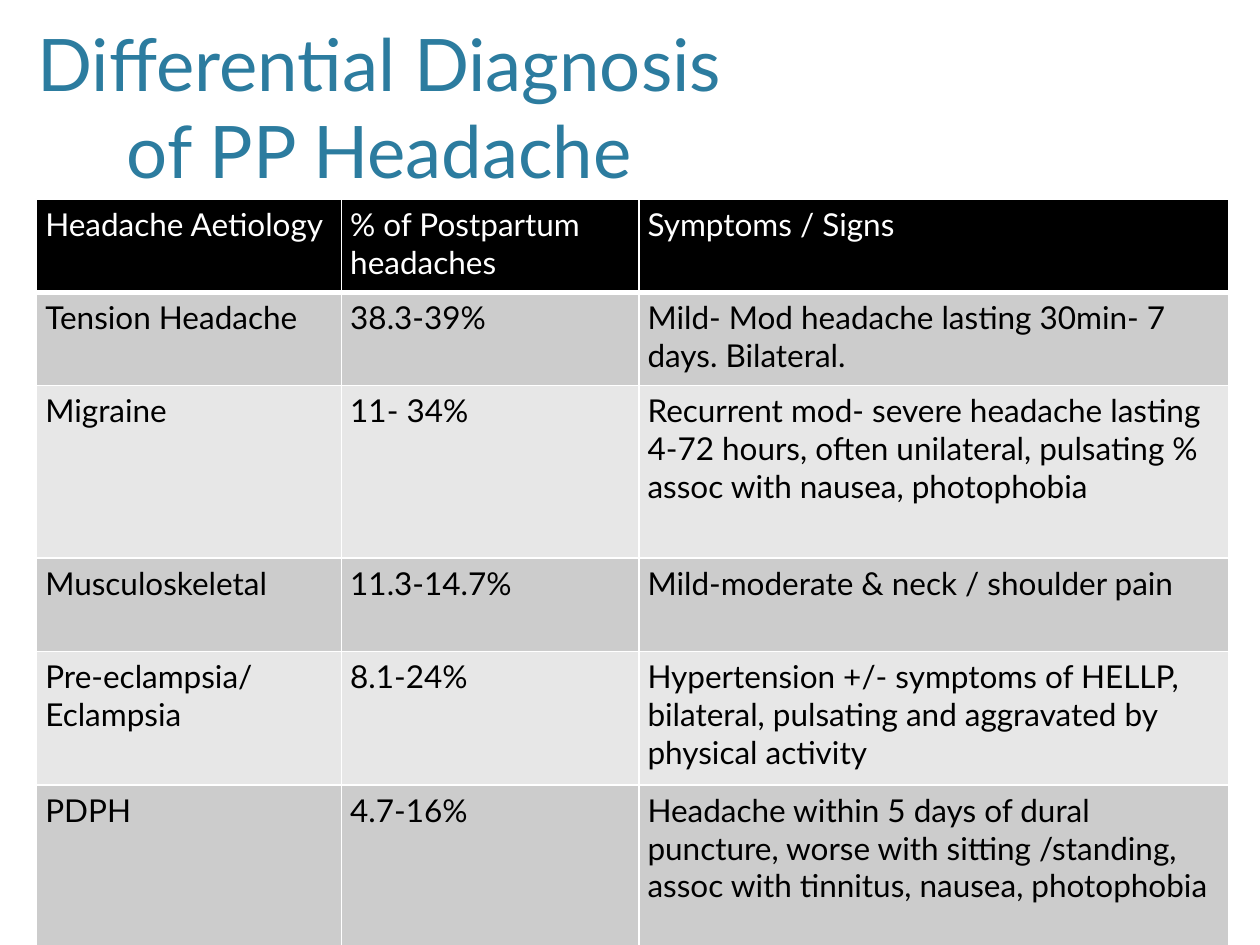
from lxml import etree
from pptx import Presentation
from pptx.dml.color import RGBColor
from pptx.enum.text import MSO_ANCHOR, MSO_AUTO_SIZE, PP_ALIGN
from pptx.oxml.ns import qn
from pptx.util import Inches, Pt

BOTTOM, NO_FIT = MSO_ANCHOR.BOTTOM, MSO_AUTO_SIZE.NONE
LEFT, CENTER = PP_ALIGN.LEFT, PP_ALIGN.CENTER

FONT = "Lato"
TEAL = RGBColor(0x2C, 0x7C, 0x9F)
BLACK = RGBColor(0x00, 0x00, 0x00)
WHITE = RGBColor(0xFF, 0xFF, 0xFF)
GREY = RGBColor(0xCC, 0xCC, 0xCC)
PALE = RGBColor(0xE7, 0xE7, 0xE7)

COL_WIDTHS = [2.42, 2.36, 4.68]
ROW_HEIGHTS = [0.74, 0.74, 1.37, 0.74, 1.06, 1.37]
ROWS = [
    ("Headache Aetiology", "% of Postpartum headaches", "Symptoms / Signs"),
    ("Tension Headache", "38.3-39%",
     "Mild- Mod headache lasting 30min- 7 days. Bilateral."),
    ("Migraine", "11- 34%",
     "Recurrent mod- severe headache lasting 4-72 hours, often unilateral, "
     "pulsating % assoc with nausea, photophobia"),
    ("Musculoskeletal", "11.3-14.7%", "Mild-moderate & neck / shoulder pain"),
    ("Pre-eclampsia/Eclampsia", "8.1-24%",
     "Hypertension +/- symptoms of HELLP, bilateral, pulsating and "
     "aggravated by physical activity"),
    ("PDPH", "4.7-16%",
     "Headache within 5 days of dural puncture, worse with sitting /standing, "
     "assoc with tinnitus, nausea, photophobia"),
]


def write(tf, text, size=18, color=BLACK, align=LEFT):
    p = tf.paragraphs[0]
    p.alignment = align
    r = p.add_run()
    r.text = text
    r.font.name = FONT
    r.font.size = Pt(size)
    r.font.bold = False
    r.font.color.rgb = color


def set_borders(cell, bottom=1):
    """Draw white cell edges; lines must come before the fill in tcPr."""
    tc_pr = cell._tc.get_or_add_tcPr()
    edges = {"a:lnL": 1, "a:lnR": 1, "a:lnT": 1, "a:lnB": bottom}
    for i, (tag, width) in enumerate(edges.items()):
        ln = etree.Element(qn(tag), w=str(Pt(width)))
        fill = etree.SubElement(ln, qn("a:solidFill"))
        etree.SubElement(fill, qn("a:srgbClr"), val=str(WHITE))
        tc_pr.insert(i, ln)


def add_title(s, text):
    title = s.shapes.title
    title.left, title.top = Inches(0), Inches(0.28)
    title.width, title.height = Inches(6.02), Inches(1.3)
    tf = title.text_frame
    tf.word_wrap = True
    tf.auto_size = NO_FIT
    tf.vertical_anchor = BOTTOM
    write(tf, text, size=41.4, color=TEAL, align=CENTER)


def add_diagnosis_table(s, left, top):
    table = s.shapes.add_table(
        len(ROWS), len(COL_WIDTHS), Inches(left), Inches(top),
        Inches(sum(COL_WIDTHS)), Inches(sum(ROW_HEIGHTS))).table
    for col, width in zip(table.columns, COL_WIDTHS):
        col.width = Inches(width)
    for i, (row, height, texts) in enumerate(
            zip(table.rows, ROW_HEIGHTS, ROWS)):
        row.height = Inches(height)
        header = i == 0
        fill = BLACK if header else (GREY if i % 2 else PALE)
        for cell, text in zip(row.cells, texts):
            cell.margin_left = cell.margin_right = Inches(0.07)
            cell.margin_top = cell.margin_bottom = Inches(0.05)
            cell.fill.solid()
            cell.fill.fore_color.rgb = fill
            set_borders(cell, bottom=3 if header else 1)
            write(cell.text_frame, text, color=WHITE if header else BLACK)


def main():
    prs = Presentation()
    prs.slide_width, prs.slide_height = Inches(10), Inches(7.5)
    s = prs.slides.add_slide(prs.slide_layouts[5])  # title only
    add_title(s, "Differential Diagnosis of PP Headache")
    add_diagnosis_table(s, left=0.29, top=1.58)
    prs.save("out.pptx")


if __name__ == "__main__":
    main()
